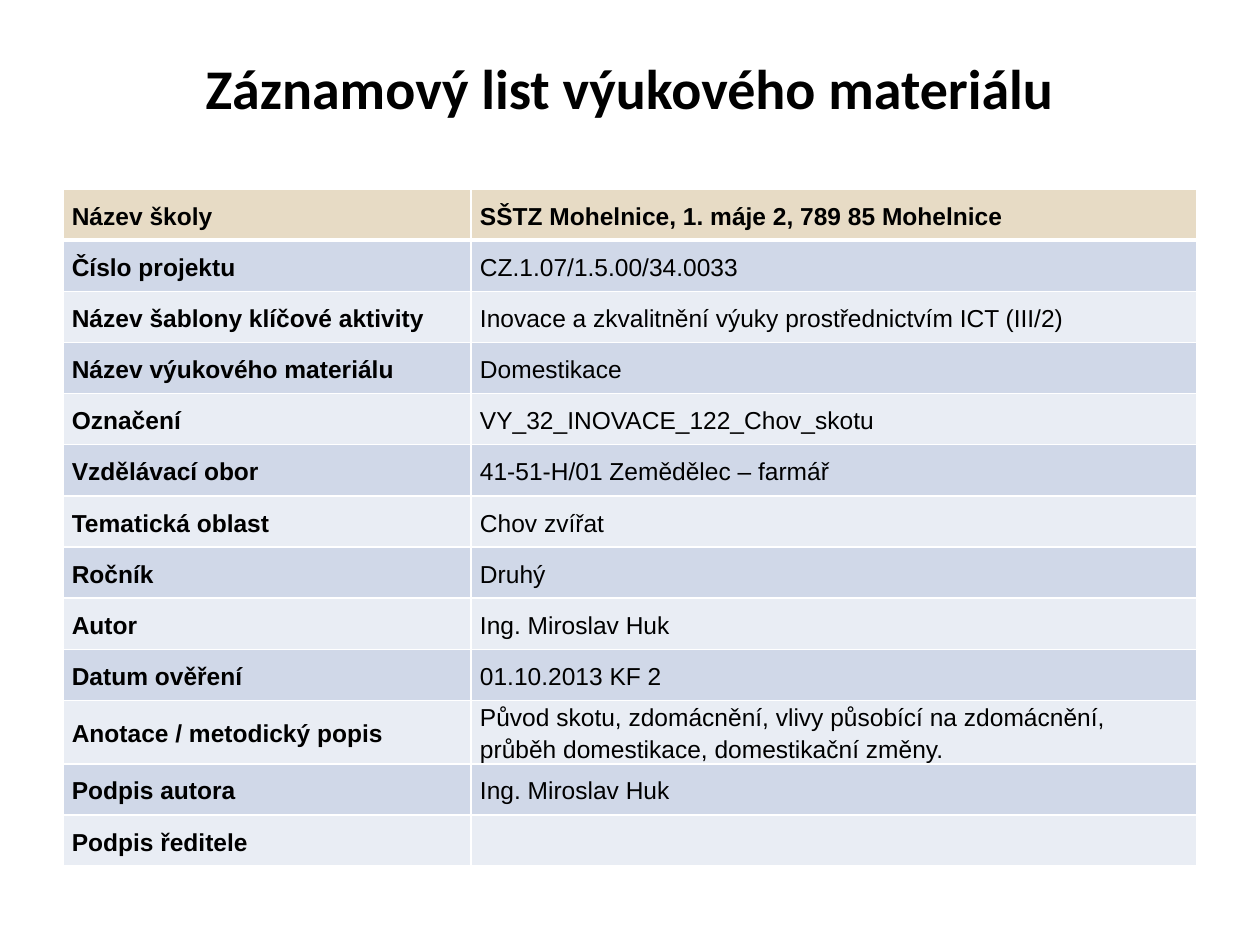
from lxml import etree
from pptx import Presentation
from pptx import util as u
from pptx.dml.color import RGBColor
from pptx.enum import text as t
from pptx.oxml import ns

BLACK = RGBColor(0x00, 0x00, 0x00)
WHITE = RGBColor(0xFF, 0xFF, 0xFF)
SAND = RGBColor(0xE7, 0xDB, 0xC5)
BLUE = RGBColor(0xD0, 0xD8, 0xE8)
PALE = RGBColor(0xE9, 0xED, 0xF4)

ROWS = [
    ("Název školy", "SŠTZ Mohelnice, 1. máje 2, 789 85 Mohelnice"),
    ("Číslo projektu", "CZ.1.07/1.5.00/34.0033"),
    ("Název šablony klíčové aktivity",
     "Inovace a zkvalitnění výuky prostřednictvím ICT (III/2)"),
    ("Název výukového materiálu", "Domestikace"),
    ("Označení", "VY_32_INOVACE_122_Chov_skotu"),
    ("Vzdělávací obor", "41-51-H/01 Zemědělec – farmář"),
    ("Tematická oblast", "Chov zvířat"),
    ("Ročník", "Druhý"),
    ("Autor", "Ing. Miroslav Huk"),
    ("Datum ověření", "01.10.2013 KF 2"),
    ("Anotace / metodický popis",
     "Původ skotu, zdomácnění, vlivy působící na zdomácnění, "
     "průběh domestikace, domestikační změny."),
    ("Podpis autora", "Ing. Miroslav Huk"),
    ("Podpis ředitele", ""),
]


def write(frame, words, size=14, face="Arial", bold=False,
          align=t.PP_ALIGN.LEFT, space=1.0):
    """Put one formatted paragraph into a text frame."""
    para = frame.paragraphs[0]
    para.alignment = align
    para.line_spacing = space
    para.font.size = u.Pt(size)
    if words:
        run = para.add_run()
        run.text = words
        font = run.font
        font.size, font.name, font.bold = u.Pt(size), face, bold
        font.color.rgb = BLACK


def edge(cell, **widths):
    """Draw white cell borders, with widths in points by side."""
    props = cell._tc.get_or_add_tcPr()
    for spot, side in enumerate("LRTB"):
        line = etree.Element(ns.qn(f"a:ln{side}"),
                             w=str(u.Pt(widths.get(side, 1))))
        fill = etree.SubElement(line, ns.qn("a:solidFill"))
        etree.SubElement(fill, ns.qn("a:srgbClr"), val=str(WHITE))
        props.insert(spot, line)


def title(slide, words):
    """Add the centred slide heading."""
    box = slide.shapes.add_textbox(u.Inches(0.5), u.Inches(0.3),
                                   u.Inches(9), u.Inches(0.78))
    frame = box.text_frame
    frame.word_wrap = True
    frame.vertical_anchor = t.MSO_ANCHOR.MIDDLE
    write(frame, words, size=32, face="Calibri", bold=True,
          align=t.PP_ALIGN.CENTER)


def record(slide, rows):
    """Add the table of labels and values with banded rows."""
    table = slide.shapes.add_table(
        len(rows), 2, u.Inches(0.5), u.Inches(1.5),
        u.Inches(9), u.Inches(5.28)).table
    for col, width in zip(table.columns, (3.24, 5.76)):
        col.width = u.Inches(width)
    for r, row in enumerate(rows):
        shade = SAND if r == 0 else BLUE if r % 2 else PALE
        for c, words in enumerate(row):
            cell = table.cell(r, c)
            cell.fill.solid()
            cell.fill.fore_color.rgb = shade
            cell.vertical_anchor = t.MSO_ANCHOR.MIDDLE
            cell.margin_left = cell.margin_right = u.Inches(0.07)
            cell.margin_top = cell.margin_bottom = 0
            edge(cell, T=3 if r == 1 else 1, B=3 if r == 0 else 1)
            write(cell.text_frame, words, bold=r == 0 or c == 0, space=1.15)


def main():
    """Build and save the slide."""
    deck = Presentation()
    deck.slide_width, deck.slide_height = u.Inches(10), u.Inches(7.5)
    slide = deck.slides.add_slide(deck.slide_layouts[6])
    record(slide, ROWS)
    title(slide, "Záznamový list výukového materiálu")
    deck.save("out.pptx")


if __name__ == "__main__":
    main()
